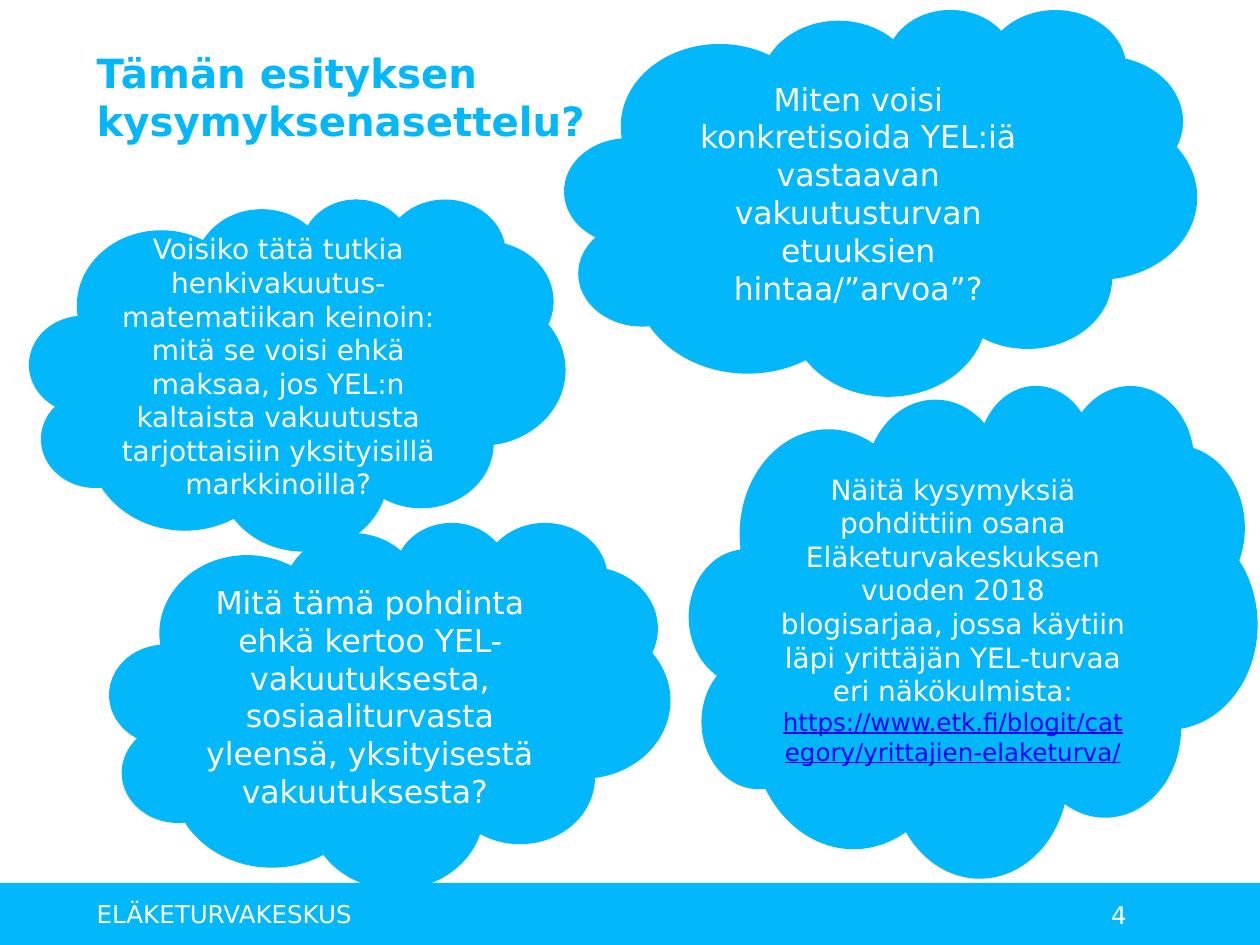
from pptx import Presentation
from pptx.dml.color import RGBColor
from pptx.enum.shapes import MSO_SHAPE
from pptx.enum.text import MSO_ANCHOR, PP_ALIGN
from pptx.util import Pt

RECTANGLE = MSO_SHAPE.RECTANGLE
CLOUD = MSO_SHAPE.CLOUD
MIDDLE = MSO_ANCHOR.MIDDLE
LEFT = PP_ALIGN.LEFT
CENTER = PP_ALIGN.CENTER

BLUE = "02B7FA"
WHITE = "FFFFFF"
LINK_BLUE = "0000FF"
FONT = "DejaVu Sans"

QUESTIONS = [
    ((322.6, 5, 361.4, 221), 18,
     "Miten voisi konkretisoida YEL:iä vastaavan vakuutusturvan etuuksien hintaa/”arvoa”?"),
    ((17.3, 113.8, 305.3, 200.2), 16,
     "Voisiko tätä tutkia henkivakuutus-matematiikan keinoin: mitä se voisi ehkä maksaa, "
     "jos YEL:n kaltaista vakuutusta tarjottaisiin yksityisillä markkinoilla?"),
    ((393.8, 219.6, 324.7, 281.5), 16,
     "Näitä kysymyksiä pohdittiin osana Eläketurvakeskuksen vuoden 2018 blogisarjaa, "
     "jossa käytiin läpi yrittäjän YEL-turvaa eri näkökulmista:"),
    ((62.6, 298.1, 320.4, 209.5), 18,
     "Mitä tämä pohdinta ehkä kertoo YEL-vakuutuksesta, sosiaaliturvasta yleensä, "
     "yksityisestä vakuutuksesta? "),
]
BLOG_INDEX = 2
BLOG_ADDRESS = "https://www.etk.fi/blogit/category/yrittajien-elaketurva/"


def color(value):
    return RGBColor.from_string(value)


def add_words(paragraph, words, size, shade=WHITE, **extra):
    run = paragraph.add_run()
    run.text = words
    formats = {"name": FONT, "size": Pt(size), **extra}
    for attribute, value in formats.items():
        setattr(run.font, attribute, value)
    run.font.color.rgb = color(shade)


def prepare_paragraph(frame, alignment):
    frame.word_wrap = True
    frame.vertical_anchor = MIDDLE
    paragraph = frame.paragraphs[0]
    paragraph.alignment = alignment
    return paragraph


def add_label(slide, box, words, size, shade=WHITE, **extra):
    label = slide.shapes.add_textbox(*map(Pt, box))
    paragraph = prepare_paragraph(label.text_frame, LEFT)
    add_words(paragraph, words, size, shade, **extra)


def add_blue_shape(slide, preset, box):
    area = slide.shapes.add_shape(preset, *map(Pt, box))
    area.shadow.inherit = False
    area.fill.solid()
    area.fill.fore_color.rgb = color(BLUE)
    area.line.fill.background()
    return area


def add_cloud(slide, box, size, question):
    cloud = add_blue_shape(slide, CLOUD, box)
    paragraph = prepare_paragraph(cloud.text_frame, CENTER)
    add_words(paragraph, question, size)
    return cloud


def main():
    deck = Presentation()
    deck.slide_width, deck.slide_height = Pt(720), Pt(540)
    slide = deck.slides.add_slide(deck.slide_layouts[6])

    add_blue_shape(slide, RECTANGLE, (0, 504.5, 720, 36))
    add_label(slide, (48.2, 2.9, 295.2, 104.4), "Tämän esityksen kysymyksenasettelu?",
              23, BLUE, bold=True)
    add_label(slide, (627.8, 508.3, 85, 28.8), "4", 14)
    add_label(slide, (48.2, 507.6, 395.3, 28.8), "ELÄKETURVAKESKUS", 14)

    clouds = [add_cloud(slide, *question) for question in QUESTIONS]
    outlined_cloud = clouds[1]
    outlined_cloud.line.color.rgb = color(BLUE)
    outlined_cloud.line.width = Pt(1)

    blog_paragraph = clouds[BLOG_INDEX].text_frame.paragraphs[0]
    blog_paragraph.add_line_break()
    add_words(blog_paragraph, BLOG_ADDRESS, 14, LINK_BLUE, underline=True)

    deck.save("out.pptx")


if __name__ == "__main__":
    main()
